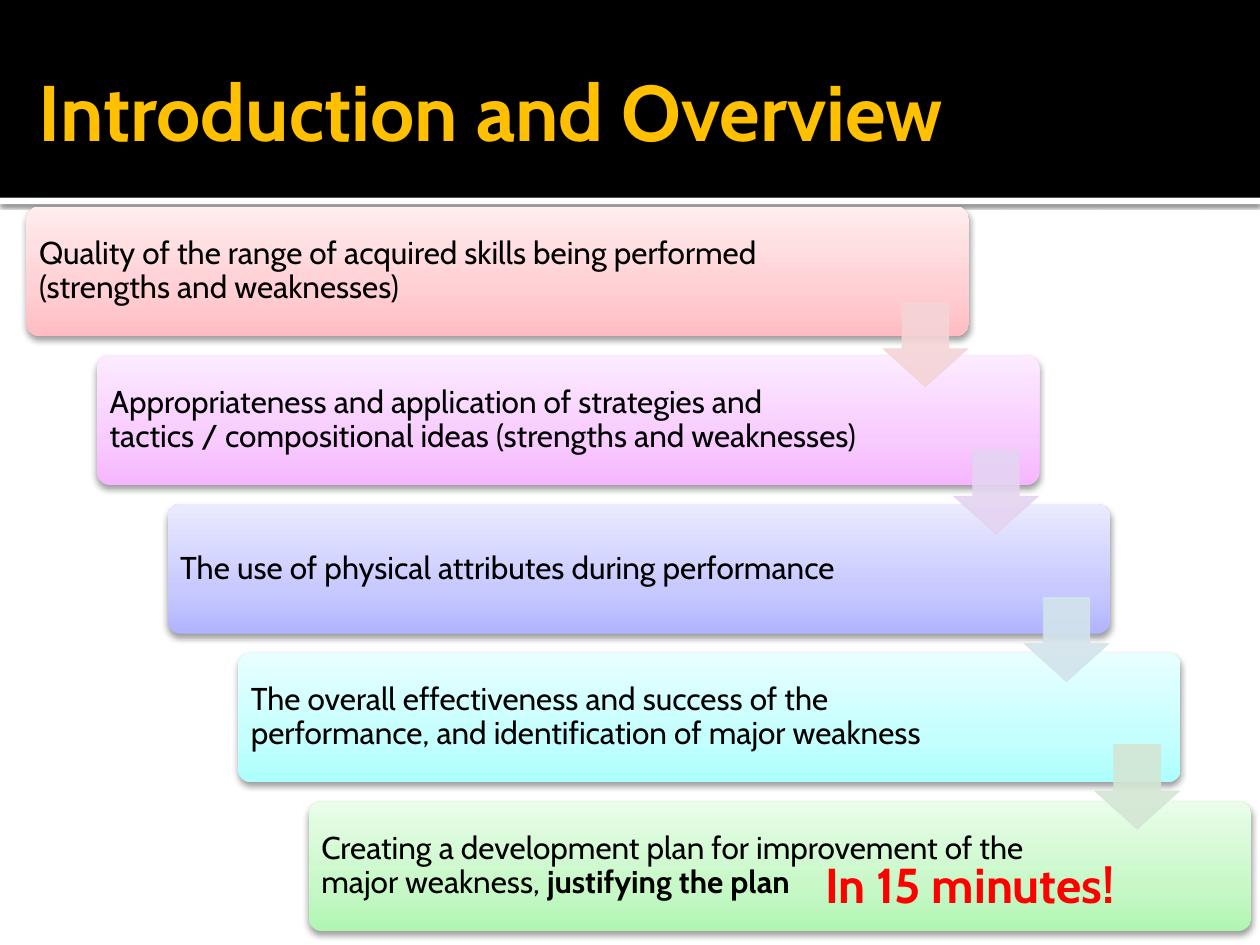
"""Build the Introduction and Overview slide with its five-step staircase."""
from lxml.etree import SubElement
from pptx import Presentation
from pptx.dml.color import RGBColor
from pptx.enum.shapes import MSO_SHAPE as Shape
from pptx.enum.text import MSO_ANCHOR as Anchor
from pptx.oxml import parse_xml
from pptx.oxml.ns import nsdecls, qn
from pptx.util import Inches, Pt

COLORS = {"black": "000000", "white": "FFFFFF", "gold": "FFC000", "red": "FF0000"}
FONT = "Cabin"
TITLE = "Introduction and Overview"
CALLOUT = "In 15 minutes!"
STEPS = [
    {"runs": [("Quality of the range of acquired skills being performed (strengths and weaknesses)", False)],
     "gradient": ("FFBCC2", "FFCFD3", "FFEDEE"), "arrow": "F5D4D7"},
    {"runs": [("Appropriateness and application of strategies and tactics / compositional ideas "
               "(strengths and weaknesses)", False)],
     "gradient": ("F6B6FF", "F8CBFF", "FCEBFF"), "arrow": "E5D4F1"},
    {"runs": [("The use of physical attributes during performance", False)],
     "gradient": ("B1B4FF", "C8CAFF", "EAEAFF"), "arrow": "D3E4EC"},
    {"runs": [("The overall effectiveness and success of the performance, "
               "and identification of major weakness", False)],
     "gradient": ("ACFFFD", "C4FFFE", "E8FFFF"), "arrow": "D4E6D4"},
    {"runs": [("Creating a development plan for improvement of the major weakness, ", False),
              ("justifying the plan", True)],
     "gradient": ("B0F6B1", "C8F8C8", "E9FDE9"), "arrow": None},
]
STOPS = (0, 35, 100)
STEP_LEFT, STEP_TOP, STEP_WIDTH, STEP_HEIGHT = 0.21, 1.64, 7.48, 1.03
SHIFT_X, SHIFT_Y = 0.56, 1.18
ARROW_LEFT, ARROW_TOP, ARROW_SIZE, ARROW_SHIFT = 7.01, 2.4, 0.67, 1.17
BAND_HEIGHT = 1.57


def add_block(page, kind, place, color=None, adjustments=()):
    block = page.shapes.add_shape(kind, *map(Inches, place))
    block.shadow.inherit = False
    block.line.fill.background()
    for index, value in enumerate(adjustments):
        block.adjustments[index] = value
    if color:
        block.fill.solid()
        block.fill.fore_color.rgb = RGBColor.from_string(color)
    return block


def add_shadow(block, opacity, blur, distance):
    effects = block._element.spPr.find(qn("a:effectLst"))
    shadow = SubElement(effects, qn("a:outerShdw"), blurRad=str(Pt(blur)), dist=str(Pt(distance)),
                        dir="5400000", algn="ctr", rotWithShape="0")
    color = SubElement(shadow, qn("a:srgbClr"), val=COLORS["black"])
    SubElement(color, qn("a:alpha"), val=str(opacity * 1000))


def set_gradient(block, colors):
    stops = "".join(f'<a:gs pos="{stop * 1000}"><a:srgbClr val="{color}"/></a:gs>'
                    for stop, color in zip(STOPS, colors))
    gradient = parse_xml(f'<a:gradFill {nsdecls("a")} rotWithShape="1"><a:gsLst>{stops}</a:gsLst>'
                         '<a:lin ang="16200000" scaled="0"/></a:gradFill>')
    block._element.spPr.find(qn("a:prstGeom")).addnext(gradient)


def add_text(page, place, runs, size, color, margins=(0.1, 0.05, 0.1, 0.05),
             anchor=Anchor.MIDDLE, spacing=1.0):
    frame = page.shapes.add_textbox(*map(Inches, place)).text_frame
    sides = zip(("margin_left", "margin_top", "margin_right", "margin_bottom"), map(Inches, margins))
    for name, value in {"word_wrap": True, "vertical_anchor": anchor, **dict(sides)}.items():
        setattr(frame, name, value)
    para = frame.paragraphs[0]
    para.line_spacing = spacing
    for text, bold in runs:
        span = para.add_run()
        span.text = text
        for name, value in {"name": FONT, "size": Pt(size), "bold": bold}.items():
            setattr(span.font, name, value)
        span.font.color.rgb = RGBColor.from_string(color)


def add_step(page, index, step):
    left, top = STEP_LEFT + index * SHIFT_X, STEP_TOP + index * SHIFT_Y
    box = add_block(page, Shape.ROUNDED_RECTANGLE, (left, top, STEP_WIDTH, STEP_HEIGHT), adjustments=(0.1,))
    set_gradient(box, step["gradient"])
    add_shadow(box, 38, 3.5, 2)
    add_text(page, (left + 0.03, top + 0.03, 6.19, 0.97), step["runs"], 18, COLORS["black"],
             margins=(0.07,) * 4, spacing=0.9)


def add_arrow(page, index, color):
    place = (ARROW_LEFT + index * SHIFT_X, ARROW_TOP + index * ARROW_SHIFT, ARROW_SIZE, ARROW_SIZE)
    arrow = add_block(page, Shape.DOWN_ARROW, place, color, (0.55, 0.45))
    arrow.line.color.rgb = RGBColor.from_string(color)
    arrow.line.width = Pt(0.5)
    for tint in arrow._element.spPr.iter(qn("a:srgbClr")):
        SubElement(tint, qn("a:alpha"), val="90000")


def main():
    deck = Presentation()
    deck.slide_width, deck.slide_height = Inches(10), Inches(7.5)
    page = deck.slides.add_slide(deck.slide_layouts[6])
    strip = add_block(page, Shape.RECTANGLE, (0, BAND_HEIGHT, 10, 0.05), COLORS["white"])
    add_shadow(strip, 60, 2.5, 0.8)
    add_block(page, Shape.RECTANGLE, (0, 0, 10, BAND_HEIGHT), COLORS["black"])
    add_text(page, (0.21, 0.44, 8.29, 0.87), [(TITLE, True)], 45, COLORS["gold"],
             margins=(0.1, 0.05, 0.05, 0.05))
    for index, step in enumerate(STEPS):
        add_step(page, index, step)
    for index, step in enumerate(STEPS[:-1]):
        add_arrow(page, index, step["arrow"])
    add_text(page, (6.45, 6.73, 3.39, 0.57), [(CALLOUT, True)], 28, COLORS["red"], anchor=Anchor.TOP)
    deck.save("out.pptx")


if __name__ == "__main__":
    main()
